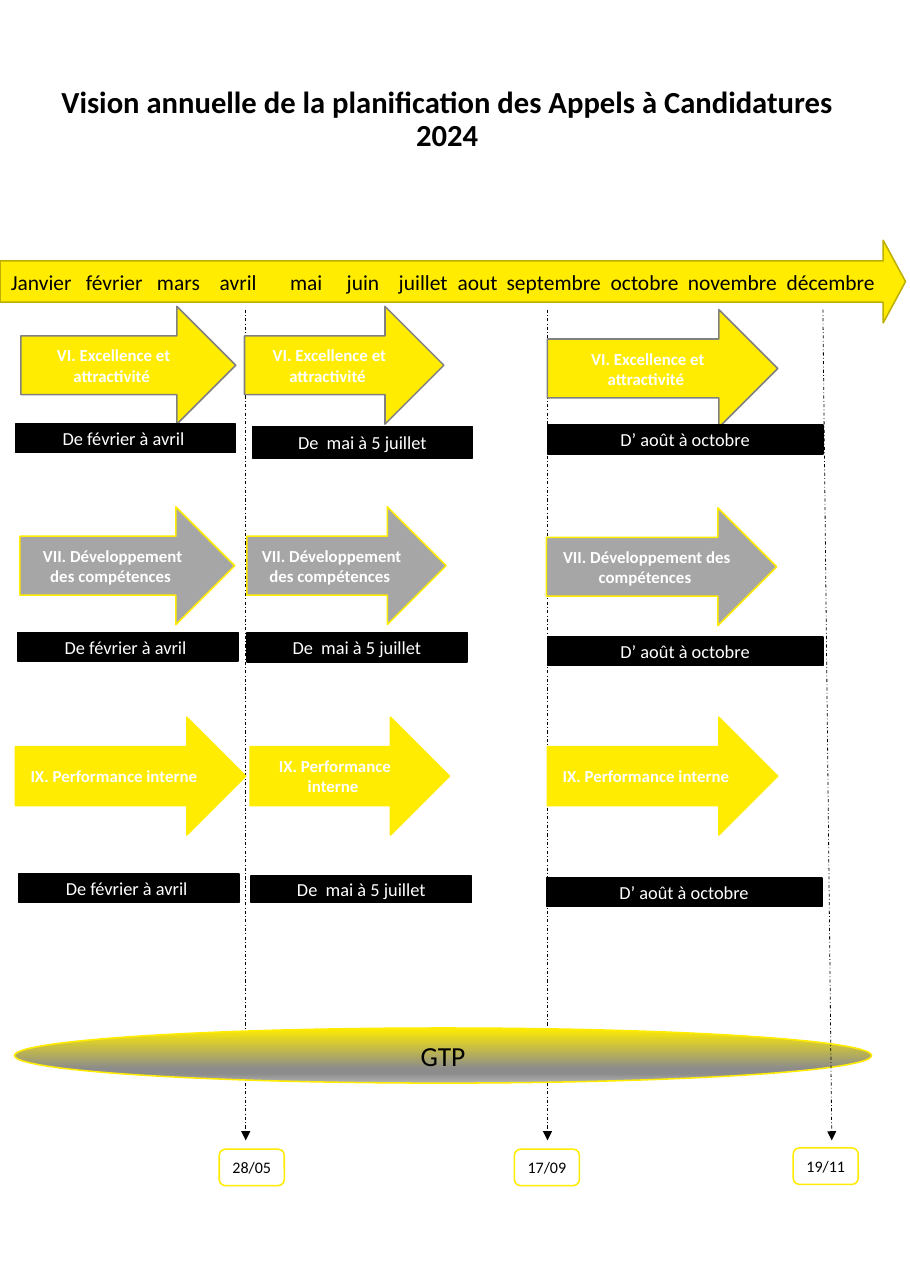
from lxml import etree
from pptx import Presentation
from pptx.dml.color import RGBColor
from pptx.enum.dml import MSO_LINE_DASH_STYLE as Dash
from pptx.enum.shapes import MSO_CONNECTOR as Connector, MSO_SHAPE as Shape
from pptx.enum.text import MSO_ANCHOR as Anchor, PP_ALIGN as Align
from pptx.oxml import parse_xml
from pptx.oxml.ns import nsdecls, qn
from pptx.util import Pt

YELLOW = RGBColor(0xFF, 0xEC, 0x00)
OLIVE = RGBColor(0xBD, 0xAF, 0x00)
GREY = RGBColor(0xA6, 0xA6, 0xA6)
DARK_GREY = RGBColor(0x80, 0x80, 0x80)
MID_GREY = RGBColor(0x8C, 0x8C, 0x8C)
LIGHT_GREY = RGBColor(0xB2, 0xB2, 0xB2)
BLACK = RGBColor(0x00, 0x00, 0x00)
WHITE = RGBColor(0xFF, 0xFF, 0xFF)

# Each month with its tab position
MONTHS = [("Janvier", 0), ("février", 49), ("mars", 95.5), ("avril", 136.5),
          ("mai", 182.5), ("juin", 219.5), ("juillet", 253.5), ("aout", 292),
          ("septembre", 324), ("octobre", 392), ("novembre", 442.5), ("décembre", 507)]

PERIODS = ["De février à avril ", "De  mai à 5 juillet", "D’ août à octobre"]
BAR_WIDTHS = [144, 144, 180]
ARROW_HEIGHT = 77

# Label, fill, outline, arrows (left, top, width), bars (left, top, height)
PROGRAMMES = [
    ("VI. Excellence et attractivité ", YELLOW, DARK_GREY,
     [(13.7, 200.2, 140.4), (159.8, 200.2, 130.3), (357.8, 202.3, 150.5)],
     [(10.1, 277.2, 18.7), (164.9, 278.6, 20.9), (357.8, 277.9, 18.7)]),
    ("VII. Développement des compétences ", GREY, YELLOW,
     [(13, 331.2, 140.4), (161.3, 331.2, 130.3), (357.1, 331.9, 150.5)],
     [(11.5, 413.3, 18.7), (161.3, 413.3, 19.4), (357.8, 416.2, 18.7)]),
    ("IX. Performance interne ", YELLOW, YELLOW,
     [(10.1, 468.7, 150.5), (163.4, 468.7, 130.3), (357.8, 468.7, 150.5)],
     [(12.2, 571, 18.7), (164.2, 572.4, 17.3), (357.1, 573.8, 18.7)]),
]

# Deadline, box left, box top, line start, line end
DEADLINES = [("28/05", 143.3, 751, 160.6, 160.6),
             ("17/09", 336.2, 751, 357.8, 357.8),
             ("19/11", 518.4, 750.2, 537.8, 543.6)]


class Planner:
    """Draws the elements of the yearly plan on one page."""

    font = "Calibri"

    def __init__(self, page):
        self.page = page

    def set_text(self, box, text, *, size, color=BLACK, bold=False,
                 align=Align.CENTER, spacing=None, tabs=()):
        frame = box.text_frame
        frame.word_wrap = True
        frame.vertical_anchor = Anchor.MIDDLE
        para = frame.paragraphs[0]
        para.alignment = align
        if spacing:
            para.line_spacing = spacing
        if tabs:
            tab_list = etree.SubElement(para._p.get_or_add_pPr(), qn("a:tabLst"))
            for position in tabs:
                etree.SubElement(tab_list, qn("a:tab"), pos=str(Pt(position)), algn="l")
        span = para.add_run()
        span.text = text
        span.font.name = self.font
        span.font.size = Pt(size)
        span.font.bold = bold
        span.font.color.rgb = color

    def title(self, left, top, width, height, text):
        box = self.page.shapes.add_textbox(Pt(left), Pt(top), Pt(width), Pt(height))
        self.set_text(box, text, size=20, bold=True, spacing=0.9)

    def shape(self, kind, left, top, width, height, fill, outline):
        shape = self.page.shapes.add_shape(kind, Pt(left), Pt(top), Pt(width), Pt(height))
        shape.shadow.inherit = False
        shape.fill.solid()
        shape.fill.fore_color.rgb = fill
        shape.line.color.rgb = outline
        shape.line.width = Pt(1)
        return shape

    def gradient(self, shape, stops):
        marks = "".join(f'<a:gs pos="{percent * 1000}"><a:srgbClr val="{color}"/></a:gs>'
                        for percent, color in stops)
        blend = parse_xml(f'<a:gradFill {nsdecls("a")} rotWithShape="1"><a:gsLst>{marks}'
                          '</a:gsLst><a:lin ang="5400000" scaled="0"/></a:gradFill>')
        properties = shape._element.spPr
        properties.replace(properties.find(qn("a:solidFill")), blend)

    def deadline_line(self, start, end):
        line = self.page.shapes.add_connector(
            Connector.STRAIGHT, Pt(start), Pt(202.3), Pt(end), Pt(745.2))
        line.line.color.rgb = BLACK
        line.line.width = Pt(0.5)
        line.line.dash_style = Dash.DASH_DOT
        properties = line._element.spPr
        etree.SubElement(properties.find(qn("a:ln")), qn("a:tailEnd"), type="triangle")
        etree.SubElement(properties, qn("a:effectLst"))

    def deadline_box(self, left, top, text):
        box = self.shape(Shape.ROUNDED_RECTANGLE, left, top, 42.5, 23.8, WHITE, YELLOW)
        self.set_text(box, text, size=10.5)


def main():
    deck = Presentation()
    deck.slide_width, deck.slide_height = Pt(594.72), Pt(841.68)
    planner = Planner(deck.slides.add_slide(deck.slide_layouts[6]))

    # Title and month band
    for _, _, _, start, end in DEADLINES[:2]:
        planner.deadline_line(start, end)
    planner.title(19.4, 59.8, 545.8, 36.7,
                  "Vision annuelle de la planification des Appels à Candidatures 2024")
    band = planner.shape(Shape.RIGHT_ARROW, 0, 157, 591.8, 54, YELLOW, OLIVE)
    band.adjustments[1] = 0.27
    planner.set_text(band, "\t".join(month for month, _ in MONTHS), size=14,
                     align=Align.LEFT, tabs=[position for _, position in MONTHS[1:]])

    # Steering group, crossed by the last deadline
    group = planner.shape(Shape.OVAL, 9.4, 671.8, 560.2, 36, YELLOW, YELLOW)
    planner.gradient(group, [(0, YELLOW), (74, MID_GREY), (83, MID_GREY), (100, LIGHT_GREY)])
    planner.set_text(group, "GTP", size=18)
    planner.deadline_line(*DEADLINES[2][3:])

    # Deadline dates
    for date, left, top, _, _ in DEADLINES:
        planner.deadline_box(left, top, date)

    # Programme arrows and their periods
    for label, fill, outline, arrows, bars in PROGRAMMES:
        for left, top, width in arrows:
            arrow = planner.shape(Shape.RIGHT_ARROW, left, top, width, ARROW_HEIGHT,
                                  fill, outline)
            planner.set_text(arrow, label, size=11, color=WHITE, bold=True)
        for (left, top, height), width, period in zip(bars, BAR_WIDTHS, PERIODS):
            bar = planner.shape(Shape.RECTANGLE, left, top, width, height, BLACK, BLACK)
            planner.set_text(bar, period, size=12, color=WHITE)

    deck.save("out.pptx")


if __name__ == "__main__":
    main()
